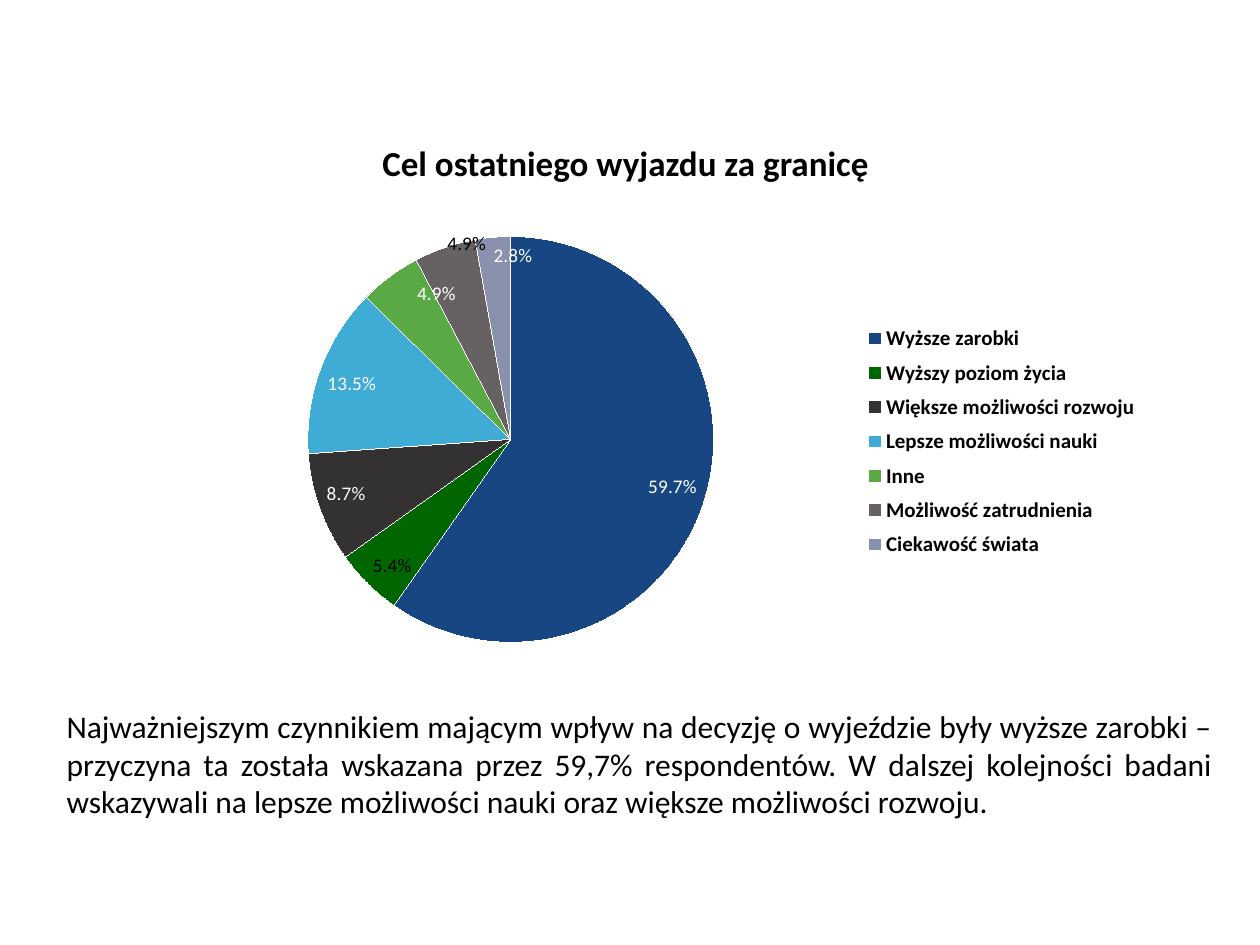
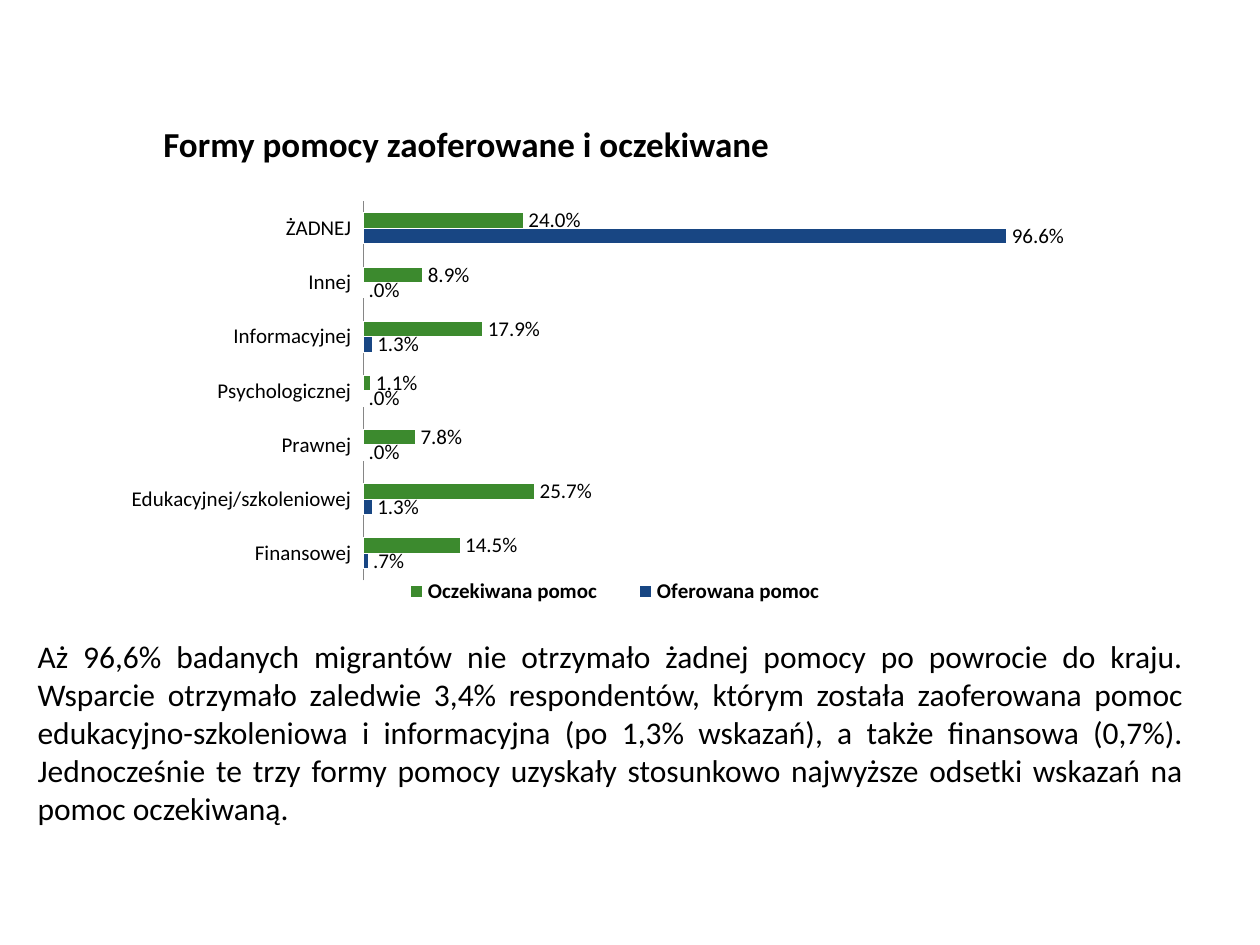
from dataclasses import dataclass

from lxml import etree
from pptx import Presentation
from pptx.chart.data import CategoryChartData
from pptx.dml.color import RGBColor
from pptx.enum.chart import XL_CHART_TYPE as ChartType
from pptx.enum.chart import XL_LABEL_POSITION as LabelPosition
from pptx.enum.chart import XL_LEGEND_POSITION as LegendPosition
from pptx.enum.chart import XL_TICK_LABEL_POSITION as TickLabelPosition
from pptx.enum.chart import XL_TICK_MARK as TickMark
from pptx.enum.text import MSO_AUTO_SIZE as AutoSize
from pptx.enum.text import PP_ALIGN as Align
from pptx.oxml.ns import qn
from pptx.util import Inches, Pt

COLUMNS, ROWS = 100, 75
BLANK_LAYOUT = 6


@dataclass(frozen=True)
class Theme:
    font: str = "Calibri"
    black: str = "000000"
    white: str = "FFFFFF"
    axis: str = "868686"
    navy: str = "184683"
    green: str = "3C8A2E"
    pie: tuple = ("184683", "006600", "333131", "3FACD6", "59AA44", "666264", "8A91AD")
    title_size: int = 20
    body_size: int = 18
    chart_size: int = 10
    label_size: int = 11
    key_size: int = 12


THEME = Theme()

TRAVEL_REASONS = {
    "Wyższe zarobki": 59.7,
    "Wyższy poziom życia": 5.4,
    "Większe możliwości rozwoju": 8.7,
    "Lepsze możliwości nauki": 13.5,
    "Inne": 4.9,
    "Możliwość zatrudnienia": 4.9,
    "Ciekawość świata": 2.8,
}
HELP_FORMS = ("Finansowej", "Edukacyjnej/szkoleniowej", "Prawnej", "Psychologicznej",
              "Informacyjnej", "Innej", "ŻADNEJ")
HELP_SHARES = {
    "Oferowana pomoc": (0.007, 0.013, 0, 0, 0.013, 0, 0.966),
    "Oczekiwana pomoc": (0.145, 0.257, 0.078, 0.011, 0.179, 0.089, 0.24),
}
TRAVEL_SUMMARY = (
    "Najważniejszym czynnikiem mającym wpływ na decyzję o wyjeździe były wyższe zarobki – "
    "przyczyna ta została wskazana przez 59,7% respondentów. W dalszej kolejności badani "
    "wskazywali na lepsze możliwości nauki oraz większe możliwości rozwoju."
)
HELP_SUMMARY = (
    "Aż 96,6% badanych migrantów nie otrzymało żadnej pomocy po powrocie do kraju. "
    "Wsparcie otrzymało zaledwie 3,4% respondentów, którym została zaoferowana pomoc "
    "edukacyjno-szkoleniowa i informacyjna (po 1,3% wskazań), a także finansowa (0,7%). "
    "Jednocześnie te trzy formy pomocy uzyskały stosunkowo najwyższe odsetki wskazań na "
    "pomoc oczekiwaną."
)


def grid_box(left, top, width, height):
    """Turn columns and rows of the slide grid into lengths."""
    column, row = Inches(10) / COLUMNS, Inches(7.5) / ROWS
    return int(left * column), int(top * row), int(width * column), int(height * row)


def set_font(font, size, color=THEME.black, bold=False):
    font.name = THEME.font
    font.size = Pt(size)
    font.bold = bold
    font.color.rgb = RGBColor.from_string(color)


def add_text(slide, text, area, *, size=THEME.body_size, align=Align.JUSTIFY, bold=False):
    frame = slide.shapes.add_textbox(*grid_box(*area)).text_frame
    frame.word_wrap = True
    frame.auto_size = AutoSize.SHAPE_TO_FIT_TEXT
    paragraph = frame.paragraphs[0]
    paragraph.alignment = align
    run = paragraph.add_run()
    run.text = text
    set_font(run.font, size, bold=bold)


def add_title(slide, text, area):
    add_text(slide, text, area, size=THEME.title_size, align=Align.CENTER, bold=True)


def place(parent, index, **shares):
    """Give a chart part a manual layout in shares of the chart's size."""
    for old in parent.findall(qn("c:layout")):
        parent.remove(old)
    layout = etree.Element(qn("c:layout"))
    manual = etree.SubElement(layout, qn("c:manualLayout"))
    for name, value in shares.items():
        etree.SubElement(manual, qn(f"c:{name}")).set("val", str(value))
    parent.insert(index, layout)


def place_area(parent, index, area, **target):
    x, y, w, h = area
    place(parent, index, **target, xMode="edge", yMode="edge", x=x, y=y, w=w, h=h)


def paint(target, color):
    target.format.fill.solid()
    target.format.fill.fore_color.rgb = RGBColor.from_string(color)
    target.format.line.color.rgb = RGBColor.from_string(THEME.white)


def add_chart(slide, kind, categories, series, number_format, area, plot_area,
              legend_position, legend_area):
    data = CategoryChartData(number_format=number_format)
    data.categories = categories
    for name, values in series.items():
        data.add_series(name, values)
    chart = slide.shapes.add_chart(kind, *grid_box(*area), data).chart
    chart.has_title = False
    set_font(chart.font, THEME.chart_size)
    place_area(chart._chartSpace.find(f".//{qn('c:plotArea')}"), 0, plot_area,
               layoutTarget="inner")
    chart.has_legend = True
    chart.legend.position = legend_position
    chart.legend.include_in_layout = False
    set_font(chart.legend.font, THEME.key_size, bold=True)
    place_area(chart.legend._element, 1, legend_area)
    return chart


def show_values(labels, number_format, position, size, color):
    labels.show_value = True
    labels.number_format = number_format
    labels.number_format_is_linked = False
    labels.position = position
    set_font(labels.font, size, color)


def adjust_label(point, color, x=0, y=0):
    """Recolour one pie label and shift it by shares of the chart's size."""
    label = point.data_label
    set_font(label.font, THEME.label_size, color)
    label.position = LabelPosition.INSIDE_END
    if x or y:
        place(label._get_or_add_dLbl(), 1, x=x, y=y)


def add_reasons_pie(slide):
    number_format = '0.0"%"'
    chart = add_chart(
        slide, ChartType.PIE, list(TRAVEL_REASONS), {"Series 1": list(TRAVEL_REASONS.values())},
        number_format, (4.3, 17, 90.6, 35.4), (0.22, 0.05, 0.36, 0.91),
        LegendPosition.RIGHT, (0.7, 0.23, 0.26, 0.56))
    plot = chart.plots[0]
    plot.vary_by_categories = True
    series = plot.series[0]
    show_values(series.data_labels, number_format, LabelPosition.INSIDE_END,
                THEME.label_size, THEME.white)
    for index, color in enumerate(THEME.pie):
        paint(series.points[index], color)
    adjust_label(series.points[1], THEME.black)
    adjust_label(series.points[4], THEME.white, x=0.02)
    adjust_label(series.points[5], THEME.black, y=-0.05)


def add_help_bars(slide):
    number_format = "####.0%"
    chart = add_chart(
        slide, ChartType.BAR_CLUSTERED, HELP_FORMS, HELP_SHARES, number_format,
        (3.5, 13.9, 90.6, 34.6), (0.28, 0.06, 0.7, 0.87),
        LegendPosition.TOP, (0.29, 0.92, 0.42, 0.07))
    plot = chart.plots[0]
    plot.vary_by_categories = False
    plot.gap_width = 150
    for series, color in zip(plot.series, (THEME.navy, THEME.green)):
        paint(series, color)
        show_values(series.data_labels, number_format, LabelPosition.OUTSIDE_END,
                    THEME.key_size, THEME.black)
    categories, values = chart.category_axis, chart.value_axis
    categories.major_tick_mark = categories.minor_tick_mark = TickMark.NONE
    categories.tick_label_position = TickLabelPosition.LOW
    categories.format.line.color.rgb = RGBColor.from_string(THEME.axis)
    set_font(categories.tick_labels.font, THEME.key_size)
    values.minimum_scale, values.maximum_scale = 0, 1.2
    values.has_major_gridlines = False
    values.visible = False


def add_travel_slide(presentation):
    slide = presentation.slides.add_slide(presentation.slide_layouts[BLANK_LAYOUT])
    add_title(slide, "Cel ostatniego wyjazdu za granicę", (2.8, 10.7, 93.7, 4.4))
    add_text(slide, TRAVEL_SUMMARY, (4.3, 55.6, 92.9, 10.1))
    add_reasons_pie(slide)


def add_help_slide(presentation):
    slide = presentation.slides.add_slide(presentation.slide_layouts[BLANK_LAYOUT])
    add_title(slide, "Formy pomocy zaoferowane i oczekiwane", (5.9, 9.2, 62.2, 4.4))
    add_text(slide, HELP_SUMMARY, (2, 50.1, 92.9, 16.2))
    add_help_bars(slide)


def main():
    presentation = Presentation()
    presentation.slide_width, presentation.slide_height = Inches(10), Inches(7.5)
    add_travel_slide(presentation)
    add_help_slide(presentation)
    presentation.save("out.pptx")


if __name__ == "__main__":
    main()
